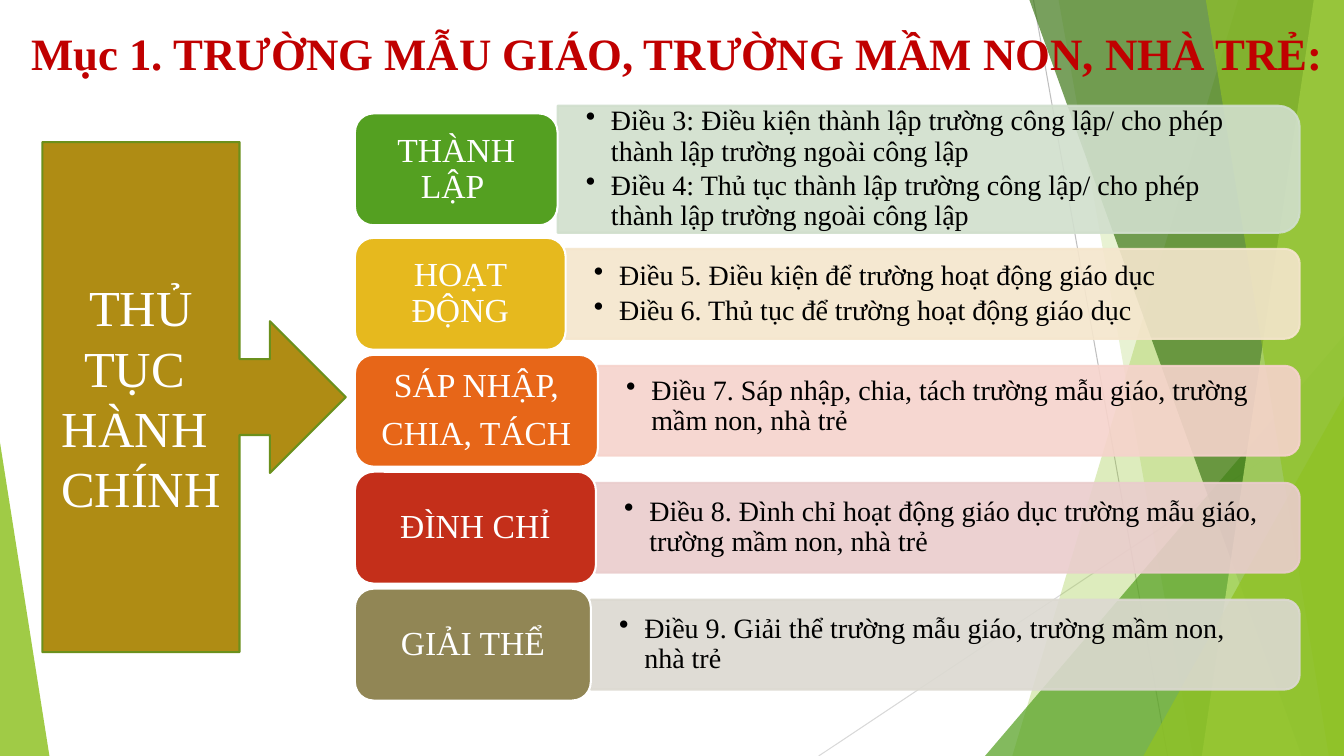
from dataclasses import dataclass

from lxml.etree import SubElement
from pptx import Presentation
from pptx.dml.color import RGBColor
from pptx.enum.shapes import MSO_CONNECTOR, MSO_SHAPE
from pptx.enum.text import MSO_ANCHOR, PP_ALIGN
from pptx.oxml.ns import qn
from pptx.util import Pt

PX = 9144
WIDE, HIGH = 1333, 750


@dataclass(frozen=True)
class Theme:
    """Hold the colours, font and type sizes."""
    font: str = "Times New Roman"
    title: int = 32
    call: int = 36
    label: int = 24
    body: int = 20
    red: str = "C00000"
    white: str = "FFFFFF"
    black: str = "000000"
    gold: str = "AF8C14"
    edge: str = "6B901C"
    green: str = "90C226"
    leaf: str = "54A021"
    dark: str = "3F7819"
    lime: str = "C0E474"


LOOK = Theme()

ROWS = [
    (["THÀNH LẬP "], 201, 126, LOOK.leaf, "D1DFCD", MSO_ANCHOR.MIDDLE,
     ["Điều 3: Điều kiện thành lập trường công lập/ cho phép thành lập trường ngoài công lập",
      "Điều 4: Thủ tục thành lập trường công lập/ cho phép thành lập trường ngoài công lập"]),
    (["HOẠT ĐỘNG"], 209, 89, "E6B91E", "F5E6CD", MSO_ANCHOR.MIDDLE,
     ["Điều 5. Điều kiện để trường hoạt động giáo dục",
      "Điều 6. Thủ tục để trường hoạt động giáo dục"]),
    (["SÁP NHẬP,", "CHIA, TÁCH"], 241, 89, "E76618", "F6D3CC", MSO_ANCHOR.BOTTOM,
     ["Điều 7. Sáp nhập, chia, tách trường mẫu giáo, trường mầm non, nhà trẻ"]),
    (["ĐÌNH CHỈ"], 239, 89, "C42F1A", "EACDCD", MSO_ANCHOR.MIDDLE,
     ["Điều 8. Đình chỉ hoạt động giáo dục trường mẫu giáo, trường mầm non, nhà trẻ"]),
    (["GIẢI THỂ"], 234, 89, "918655", "DCD9D1", MSO_ANCHOR.MIDDLE,
     ["Điều 9. Giải thể trường mẫu giáo, trường mầm non, nhà trẻ"]),
]


def scale(*spans):
    """Turn px lengths into EMU."""
    return [round(span * PX) for span in spans]


def paint(shape, hue, edge=None, alpha=100):
    """Set fill, line and opacity."""
    shape.shadow.inherit = False
    shape.fill.solid()
    shape.fill.fore_color.rgb = RGBColor.from_string(hue)
    if edge:
        shape.line.color.rgb = RGBColor.from_string(edge)
        shape.line.width = Pt(1.5)
    else:
        shape.line.fill.background()
    if alpha < 100:
        for tone in shape._element.spPr.iter(qn("a:srgbClr")):
            SubElement(tone, qn("a:alpha"), val=str(alpha * 1000))


def write(shape, lines, size, hue, bold=False, align=PP_ALIGN.CENTER,
          anchor=MSO_ANCHOR.MIDDLE, inset=(10, 5), lead=1.0, after=0, dot=False):
    """Fill a shape with formatted paragraphs."""
    frame = shape.text_frame
    frame.word_wrap = True
    frame.vertical_anchor = anchor
    frame.margin_left = frame.margin_right = inset[0] * PX
    frame.margin_top = frame.margin_bottom = inset[1] * PX
    for place, line in enumerate(lines):
        para = frame.add_paragraph() if place else frame.paragraphs[0]
        para.alignment = align
        para.line_spacing = lead
        para.space_after = Pt(after if place < len(lines) - 1 else 0)
        run = para.add_run()
        run.text = line
        font = run.font
        font.name, font.size, font.bold = LOOK.font, Pt(size), bold
        font.color.rgb = RGBColor.from_string(hue)
        if dot:
            props = para._p.get_or_add_pPr()
            props.set("marL", str(25 * PX))
            props.set("indent", str(-25 * PX))
            SubElement(props, qn("a:buChar"), char="•")


def rule(slide, ends, hue):
    """Draw a thin line."""
    line = slide.shapes.add_connector(MSO_CONNECTOR.STRAIGHT, *scale(*ends))
    line.line.color.rgb = RGBColor.from_string(hue)
    line.line.width = Pt(0.75)
    SubElement(line._element.spPr, qn("a:effectLst"))


def shard(slide, head, foot, hue, alpha):
    """Draw a pane from a slanted edge to the right side."""
    pen = slide.shapes.build_freeform(head, 0, scale=PX)
    pen.add_line_segments([(WIDE, 0), (WIDE, HIGH), (foot, HIGH)], close=True)
    paint(pen.convert_to_shape(), hue, alpha=alpha)


def wedge(slide, box, peak, hue, alpha):
    """Draw a right-angled corner triangle."""
    shape = slide.shapes.add_shape(MSO_SHAPE.ISOSCELES_TRIANGLE, *scale(*box))
    shape.adjustments[0] = peak
    paint(shape, hue, alpha=alpha)


def backdrop(slide):
    """Draw the green facets behind the content."""
    rule(slide, (1025, 0, 1158, HIGH), "BFBFBF")
    rule(slide, (WIDE, 403, 812, HIGH), "D9D9D9")
    shard(slide, 1228, 1004, LOOK.green, 30)
    shard(slide, 1050, 1183, LOOK.green, 20)
    wedge(slide, (977, 333, 356, 417), 1, LOOK.leaf, 72)
    shard(slide, 1021, 1291, LOOK.dark, 70)
    shard(slide, 1303, 1192, LOOK.lime, 70)
    shard(slide, 1196, 1318, LOOK.green, 65)
    wedge(slide, (1134, 393, 199, 357), 1, LOOK.green, 80)
    wedge(slide, (0, 439, 49, 311), 0, LOOK.green, 85)


def header(slide):
    """Write the slide title."""
    box = slide.shapes.add_textbox(*scale(21, 21, 1312, 63))
    write(box, ["Mục 1. TRƯỜNG MẪU GIÁO, TRƯỜNG MẦM NON, NHÀ TRẺ:"], LOOK.title,
          LOOK.red, bold=True, align=PP_ALIGN.LEFT, anchor=MSO_ANCHOR.BOTTOM)


def callout(slide):
    """Draw the arrow block that leads to the rows."""
    shape = slide.shapes.add_shape(MSO_SHAPE.RIGHT_ARROW_CALLOUT,
                                   *scale(42, 141, 301, 506))
    paint(shape, LOOK.gold, LOOK.edge)
    write(shape, ["THỦ", "TỤC ", "HÀNH ", "CHÍNH"], LOOK.call, LOOK.white)


def band(slide, row, mid, left=352, right=1289, tall=111):
    """Draw one label with its bar of articles."""
    label, width, deep, hue, tint, anchor, items = row
    start = left + width
    span = right - start
    bar = slide.shapes.add_shape(
        MSO_SHAPE.ROUND_2_SAME_RECTANGLE,
        *scale((start + right - deep) / 2, mid - span / 2, deep, span))
    bar.rotation = 90
    paint(bar, tint, tint, 90)
    note = slide.shapes.add_textbox(
        *scale(start + 1, mid - deep / 2 + 5, span - 6, deep - 10))
    write(note, items, LOOK.body, LOOK.black, align=PP_ALIGN.LEFT, anchor=anchor,
          inset=(27, 14), lead=0.9, after=3, dot=True)
    tab = slide.shapes.add_shape(MSO_SHAPE.ROUNDED_RECTANGLE,
                                 *scale(left, mid - tall / 2, width, tall))
    paint(tab, hue, LOOK.white)
    write(tab, label, LOOK.label, LOOK.white, lead=0.9, after=8.4)


def stack(slide, top=105, least=111, gap=5):
    """Place the rows one below the other."""
    for row in ROWS:
        tall = max(least, row[2])
        band(slide, row, top + tall / 2, tall=least)
        top += tall + gap


def main():
    """Build and save the slide."""
    deck = Presentation()
    deck.slide_width, deck.slide_height = scale(WIDE, HIGH)
    slide = deck.slides.add_slide(deck.slide_layouts[6])
    backdrop(slide)
    header(slide)
    callout(slide)
    stack(slide)
    deck.save("out.pptx")


if __name__ == "__main__":
    main()
